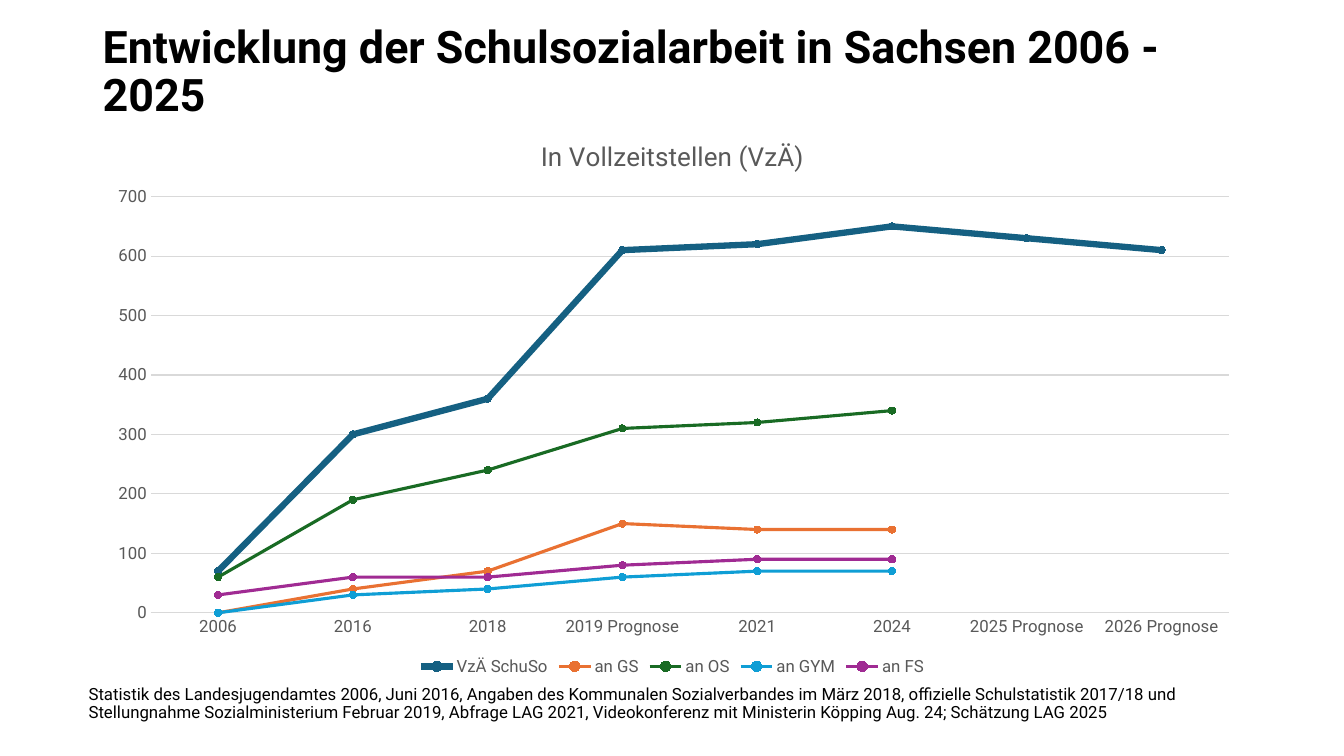
from dataclasses import dataclass

from lxml import etree
from pptx import Presentation
from pptx.chart.data import CategoryChartData as ChartData
from pptx.dml.color import RGBColor as Rgb
from pptx.enum.chart import XL_CHART_TYPE as ChartType
from pptx.enum.chart import XL_LEGEND_POSITION as LegendPosition
from pptx.enum.chart import XL_MARKER_STYLE as MarkerStyle
from pptx.enum.chart import XL_TICK_MARK as TickMark
from pptx.enum.text import MSO_ANCHOR as Anchor
from pptx.oxml.ns import qn
from pptx.util import Inches, Pt


@dataclass(frozen=True)
class Theme:
    font: str = "Roboto"
    ink: str = "000000"
    muted: str = "595959"
    grid: str = "D9D9D9"
    title_size: float = 32
    chart_title_size: float = 18.6
    small_size: float = 12
    grid_width: float = 0.75
    total_width: float = 4.5
    school_width: float = 2.25
    marker_size: int = 5


THEME = Theme()

TITLE = "Entwicklung der Schulsozialarbeit in Sachsen 2006 - 2025"
CHART_TITLE = "In Vollzeitstellen (VzÄ)"
SOURCES = (
    "Statistik des Landesjugendamtes 2006, Juni 2016, Angaben des Kommunalen "
    "Sozialverbandes im März 2018, offizielle Schulstatistik 2017/18 und "
    "Stellungnahme Sozialministerium Februar 2019, Abfrage LAG 2021, "
    "Videokonferenz mit Ministerin Köpping Aug. 24; Schätzung LAG 2025"
)
YEARS = ["2006", "2016", "2018", "2019 Prognose", "2021", "2024",
         "2025 Prognose", "2026 Prognose"]
SERIES = [
    ("VzÄ SchuSo", "156082", THEME.total_width,
     [70, 300, 360, 610, 620, 650, 630, 610]),
    ("an GS", "E97132", THEME.school_width, [0, 40, 70, 150, 140, 140]),
    ("an OS", "196B24", THEME.school_width, [60, 190, 240, 310, 320, 340]),
    ("an GYM", "0F9ED5", THEME.school_width, [0, 30, 40, 60, 70, 70]),
    ("an FS", "A02B93", THEME.school_width, [30, 60, 60, 80, 90, 90]),
]
PLOT_LAYOUT = {"layoutTarget": "inner", "xMode": "edge", "yMode": "edge",
               "x": 0.05, "y": 0.14, "w": 0.93, "h": 0.74}


def apply(target, values):
    for name, value in values.items():
        setattr(target, name, value)


def style_font(font, size, color, bold=False):
    apply(font, {"name": THEME.font, "size": Pt(size), "bold": bold})
    font.color.rgb = Rgb.from_string(color)


def style_line(line, color, width):
    line.color.rgb = Rgb.from_string(color)
    line.width = Pt(width)


def add_text(page, box, text, size, bold=False, anchor=Anchor.TOP, after=0):
    frame = page.shapes.add_textbox(*map(Inches, box)).text_frame
    apply(frame, {"word_wrap": True, "vertical_anchor": anchor})
    para = frame.paragraphs[0]
    apply(para, {"line_spacing": 0.9, "space_after": Pt(after)})
    span = para.add_run()
    span.text = text
    style_font(span.font, size, THEME.ink, bold)


def place_plot(chart):
    plot_area = chart.plots[0]._element.getparent()
    for old in plot_area.findall(qn("c:layout")):
        plot_area.remove(old)
    layout = etree.Element(qn("c:layout"))
    manual = etree.SubElement(layout, qn("c:manualLayout"))
    for name, value in PLOT_LAYOUT.items():
        etree.SubElement(manual, qn(f"c:{name}")).set("val", str(value))
    plot_area.insert(0, layout)


def style_axes(chart):
    years, positions = chart.category_axis, chart.value_axis
    for axis in (years, positions):
        apply(axis, {"major_tick_mark": TickMark.NONE,
                     "minor_tick_mark": TickMark.NONE})
        style_font(axis.tick_labels.font, THEME.small_size, THEME.muted)
    apply(positions, {"minimum_scale": 0, "maximum_scale": 700,
                      "major_unit": 100, "has_major_gridlines": True})
    positions.format.line.fill.background()
    for line in (years.format.line, positions.major_gridlines.format.line):
        style_line(line, THEME.grid, THEME.grid_width)


def style_series(chart):
    for series, (_, color, width, _) in zip(chart.plots[0].series, SERIES):
        series.smooth = False
        style_line(series.format.line, color, width)
        marker = series.marker
        apply(marker, {"style": MarkerStyle.CIRCLE, "size": THEME.marker_size})
        marker.format.fill.solid()
        marker.format.fill.fore_color.rgb = Rgb.from_string(color)
        style_line(marker.format.line, color, THEME.grid_width)


def add_staff_chart(page, box):
    data = ChartData()
    data.categories = YEARS
    for name, _, _, values in SERIES:
        data.add_series(name, values + [None] * (len(YEARS) - len(values)))
    chart = page.shapes.add_chart(
        ChartType.LINE_MARKERS, *map(Inches, box), data).chart
    style_font(chart.font, THEME.small_size, THEME.muted)
    apply(chart, {"has_title": True, "has_legend": True})
    chart.plots[0].vary_by_categories = False
    span = chart.chart_title.text_frame.paragraphs[0].add_run()
    span.text = CHART_TITLE
    style_font(span.font, THEME.chart_title_size, THEME.muted)
    apply(chart.legend, {"position": LegendPosition.BOTTOM,
                         "include_in_layout": False})
    style_font(chart.legend.font, THEME.small_size, THEME.muted)
    style_axes(chart)
    style_series(chart)
    place_plot(chart)


def build_chart_slide(deck, box):
    left, top, width, height = box
    page = deck.slides.add_slide(deck.slide_layouts[6])
    add_text(page, (left, top, width, 0.65), TITLE, THEME.title_size,
             bold=True, anchor=Anchor.MIDDLE)
    add_staff_chart(page, (left, top + 0.77, width, 5.58))
    add_text(page, (left - 0.14, top + height - 0.47, width + 0.28, 0.47),
             SOURCES, THEME.small_size, after=6)


def main():
    deck = Presentation()
    apply(deck, {"slide_width": Inches(13.33), "slide_height": Inches(7.5)})
    build_chart_slide(deck, (0.92, 0.4, 11.5, 6.83))
    deck.save("out.pptx")


if __name__ == "__main__":
    main()
